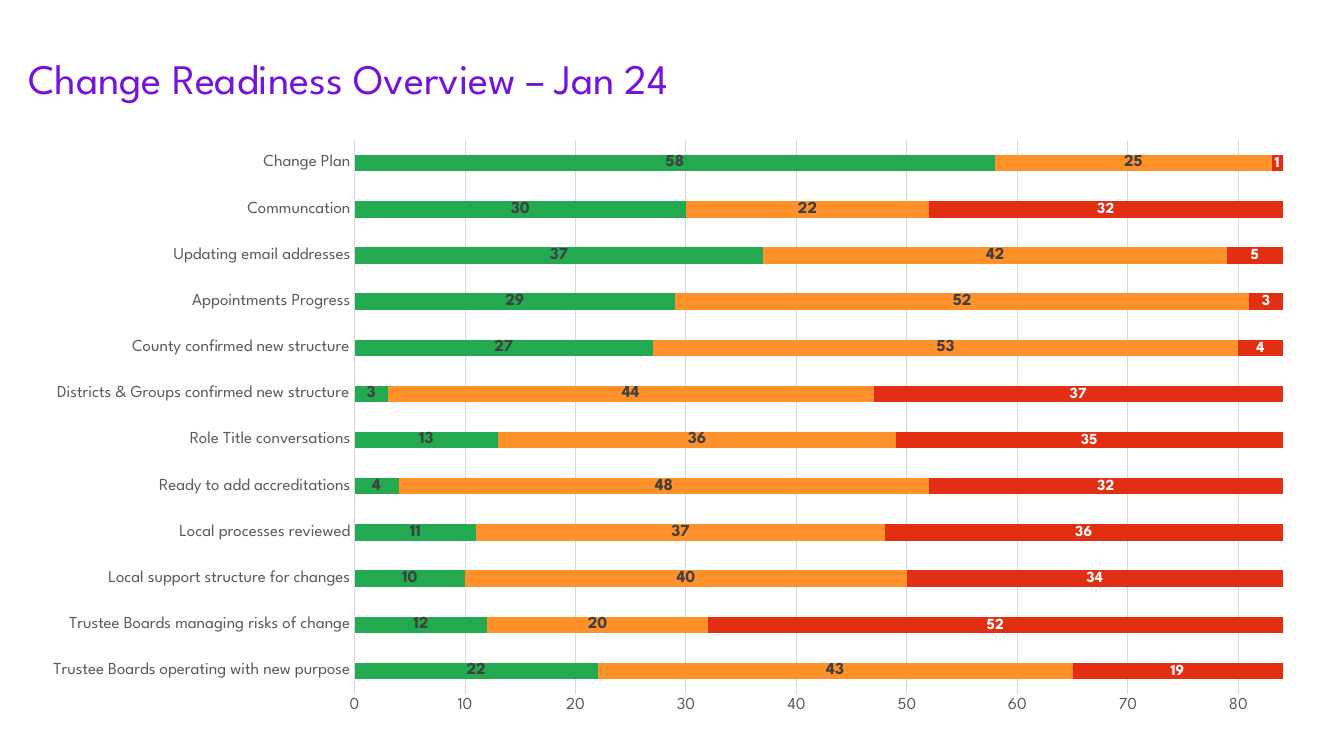
from lxml import etree
from pptx import Presentation
from pptx import util as u
from pptx.chart.data import CategoryChartData
from pptx.dml.color import RGBColor
from pptx.enum import chart as ch, text

FONT = "League Spartan"
HUES = {"title": "7413DC", "green": "23A950", "amber": "FF912A", "red": "E22E12",
        "dark": "404040", "white": "FFFFFF", "axis": "595959", "grid": "D9D9D9"}
SERIES = [("Series 1", "green", "dark", 12), ("Series 2", "amber", "dark", 12),
          ("Series 3", "red", "white", 11)]
ROWS = [
    ("Trustee Boards operating with new purpose", 22, 43, 19),
    ("Trustee Boards managing risks of change", 12, 20, 52),
    ("Local support structure for changes", 10, 40, 34),
    ("Local processes reviewed", 11, 37, 36),
    ("Ready to add accreditations", 4, 48, 32),
    ("Role Title conversations", 13, 36, 35),
    ("Districts & Groups confirmed new structure", 3, 44, 37),
    ("County confirmed new structure", 27, 53, 4),
    ("Appointments Progress", 29, 52, 3),
    ("Updating email addresses", 37, 42, 5),
    ("Communcation", 30, 22, 32),
    ("Change Plan", 58, 25, 1),
]


class Deck:
    """Holds the slide and its style, and adds each kind of element."""

    def __init__(self):
        self.show = Presentation()
        self.show.slide_width, self.show.slide_height = u.Cm(33.87), u.Cm(19.05)
        self.slide = self.show.slides.add_slide(self.show.slide_layouts[5])

    def hue(self, name):
        return RGBColor.from_string(HUES[name])

    def style(self, font, size, color, bold=False):
        font.name, font.size, font.bold = FONT, u.Pt(size), bold
        font.color.rgb = self.hue(color)

    def title(self, words, left, top, width, height):
        box = self.slide.shapes.title
        box.left, box.top, box.width, box.height = map(u.Cm, (left, top, width, height))
        frame = box.text_frame
        frame.margin_left = frame.margin_right = frame.margin_top = frame.margin_bottom = 0
        frame.word_wrap = True
        frame.auto_size = text.MSO_AUTO_SIZE.SHAPE_TO_FIT_TEXT
        frame.vertical_anchor = text.MSO_ANCHOR.TOP
        line = frame.paragraphs[0]
        line.alignment = text.PP_ALIGN.LEFT
        run = line.add_run()
        run.text = words
        self.style(run.font, 30, "title")

    def line(self, form):
        form.line.color.rgb = self.hue("grid")
        form.line.width = u.Pt(0.75)

    def axis(self, axis):
        axis.major_tick_mark = axis.minor_tick_mark = ch.XL_TICK_MARK.NONE
        self.style(axis.tick_labels.font, 12, "axis")

    def place(self, chart, **parts):
        area = chart._chartSpace.chart.plotArea
        space = area.nsmap["c"]
        for old in area.findall(f"{{{space}}}layout"):
            area.remove(old)
        layout = etree.Element(f"{{{space}}}layout")
        manual = etree.SubElement(layout, f"{{{space}}}manualLayout")
        modes = {"layoutTarget": "inner", "xMode": "edge", "yMode": "edge"}
        for tag, val in {**modes, **parts}.items():
            etree.SubElement(manual, f"{{{space}}}{tag}", val=str(val))
        area.insert(0, layout)

    def bars(self, left, top, width, height):
        data = CategoryChartData()
        data.categories = [row[0] for row in ROWS]
        for col, (name, *_) in enumerate(SERIES, 1):
            data.add_series(name, [row[col] for row in ROWS])
        chart = self.slide.shapes.add_chart(
            ch.XL_CHART_TYPE.BAR_STACKED, *map(u.Cm, (left, top, width, height)), data).chart
        chart.has_legend = chart.has_title = False
        self.style(chart.font, 10, "axis")
        self.place(chart, x=0.26, y=0.02, w=0.73, h=0.93)
        self.place(chart, x=0.255, y=0.02, w=0.725, h=0.927)

        self.axis(chart.category_axis)
        self.line(chart.category_axis.format)
        scale = chart.value_axis
        self.axis(scale)
        scale.minimum_scale, scale.maximum_scale, scale.major_unit = 0, 84, 10
        scale.format.line.fill.background()
        scale.has_major_gridlines = True
        self.line(scale.major_gridlines.format)

        plot = chart.plots[0]
        plot.gap_width, plot.overlap, plot.vary_by_categories = 182, 100, False
        for series, (_, fill, ink, size) in zip(plot.series, SERIES):
            series.format.fill.solid()
            series.format.fill.fore_color.rgb = self.hue(fill)
            series.invert_if_negative = False
            labels = series.data_labels
            labels.show_value = True
            labels.position = ch.XL_LABEL_POSITION.CENTER
            self.style(labels.font, size, ink, True)


def main():
    deck = Deck()
    deck.title("Change Readiness Overview – Jan 24", 0.71, 1.32, 19.81, 1.27)
    deck.bars(0.71, 3.23, 32.26, 15.06)
    deck.show.save("out.pptx")


if __name__ == "__main__":
    main()
